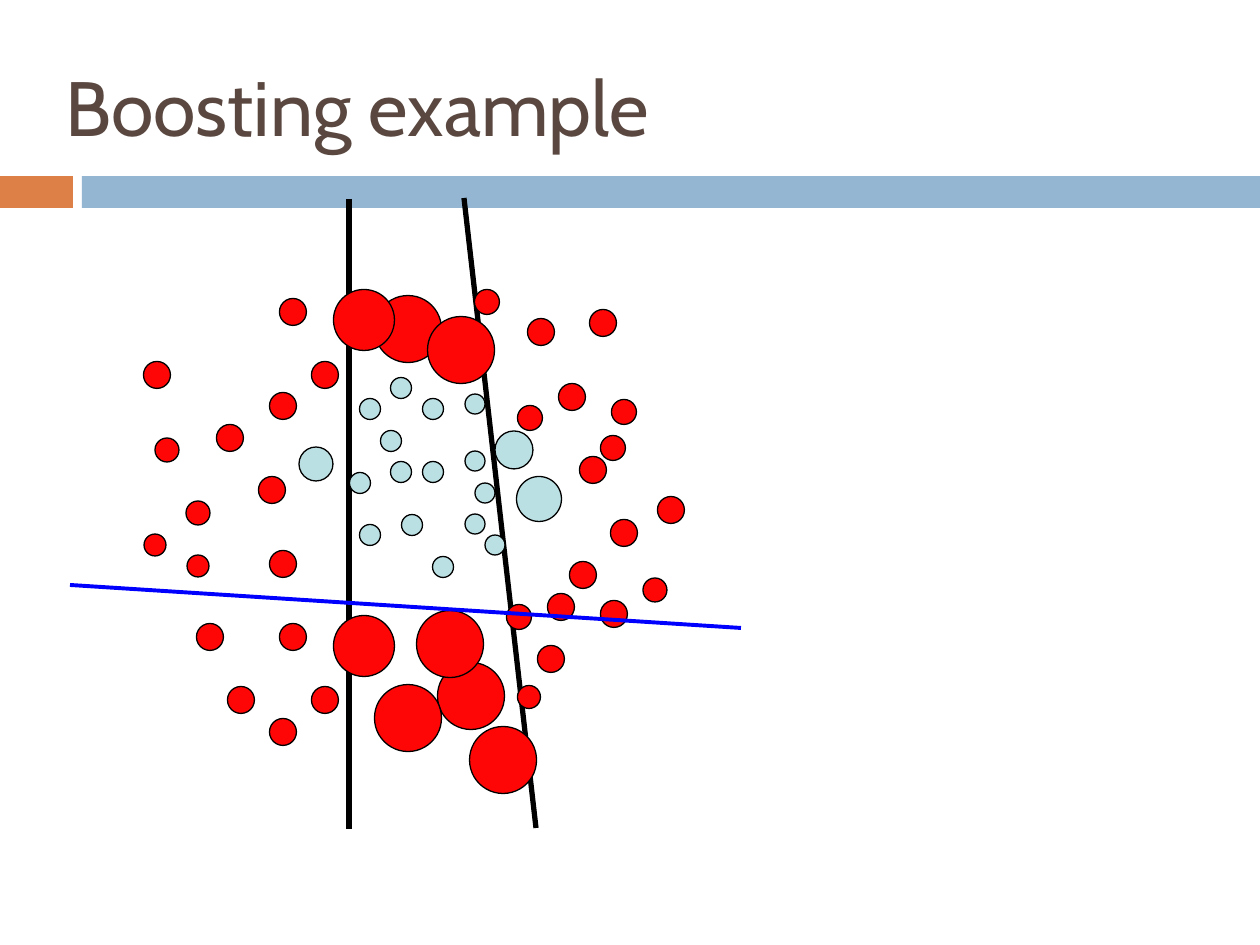
"""Build the boosting example slide: weighted points split by three weak classifiers."""
import pptx
import pptx.dml.color
import pptx.enum.shapes
import pptx.enum.text
import pptx.oxml.ns
import pptx.util
import lxml.etree

RGBColor = pptx.dml.color.RGBColor
BROWN = RGBColor(0x59, 0x47, 0x40)
ORANGE = RGBColor(0xDD, 0x80, 0x47)
STEEL = RGBColor(0x94, 0xB6, 0xD2)
BLACK = RGBColor(0, 0, 0)
BLUE = RGBColor(0, 0, 0xFF)
RED = RGBColor(0xFE, 0x06, 0x06)
PALE = RGBColor(0xBB, 0xE0, 0xE3)
SHAPES = pptx.enum.shapes.MSO_SHAPE
EMU_PER_PX = 914400 / 126

deck = pptx.Presentation()
deck.slide_width = round(1260 * EMU_PER_PX)
deck.slide_height = round(945 * EMU_PER_PX)
slide = deck.slides.add_slide(deck.slide_layouts[6])


def add_filled(kind, box, fill, outline=None):
    shape = slide.shapes.add_shape(kind, *[round(px * EMU_PER_PX) for px in box])
    shape.shadow.inherit = False
    shape.fill.solid()
    shape.fill.fore_color.rgb = fill
    if outline is None:
        shape.line.fill.background()
    else:
        shape.line.color.rgb = outline
        shape.line.width = pptx.util.Pt(0.75)


def add_boundary(ends, color, weight):
    boundary = slide.shapes.add_connector(
        pptx.enum.shapes.MSO_CONNECTOR.STRAIGHT, *[round(px * EMU_PER_PX) for px in ends])
    boundary.line.color.rgb = color
    boundary.line.width = pptx.util.Pt(weight)
    lxml.etree.SubElement(boundary._element.spPr, pptx.oxml.ns.qn("a:effectLst"))


add_filled(SHAPES.RECTANGLE, (0, 176, 73, 32), ORANGE)
add_filled(SHAPES.RECTANGLE, (82, 176, 1178, 32), STEEL)

heading = slide.shapes.add_textbox(*[round(px * EMU_PER_PX) for px in (53, 32, 1134, 157)])
heading.text_frame.word_wrap = True
heading.text_frame.vertical_anchor = pptx.enum.text.MSO_ANCHOR.MIDDLE
heading_line = heading.text_frame.paragraphs[0]
heading_line.line_spacing = 0.93
heading_words = heading_line.add_run()
heading_words.text = "Boosting example"
heading_words.font.name = "Cabin"
heading_words.font.size = pptx.util.Pt(44)
heading_words.font.color.rgb = BROWN

add_boundary((349, 199, 349, 829), BLACK, 3)
add_boundary((464, 198, 536, 828), BLACK, 3)

points_by_weight = [
    (PALE, 21, [(433, 409), (401, 472), (370, 535), (433, 472), (412, 525),
                (360, 483), (370, 409), (443, 567), (391, 441), (401, 388)]),
    (PALE, 20, [(475, 404), (475, 524), (475, 461), (485, 493), (495, 545)]),
    (PALE, 34, [(316, 464)]),
    (RED, 22, [(155, 545), (198, 566)]),
    (RED, 23, [(529, 697)]),
    (RED, 24, [(655, 590), (167, 450), (198, 513)]),
    (RED, 25, [(613, 448), (530, 418), (487, 302), (624, 412), (519, 617)]),
    (RED, 27, [(624, 533), (583, 575), (614, 614), (671, 510), (157, 375), (230, 438),
               (293, 637), (283, 564), (283, 732), (325, 700), (293, 312), (283, 406),
               (325, 375), (541, 332), (603, 323), (572, 397), (210, 637), (272, 490),
               (241, 700), (593, 470), (551, 659), (561, 607)]),
    (RED, 67, [(471, 696), (450, 644), (408, 718), (503, 760), (408, 329), (461, 350)]),
    (RED, 61, [(364, 646), (364, 320)]),
    (PALE, 38, [(514, 450)]),
    (PALE, 45, [(539, 499)]),
]
for color, size, centres in points_by_weight:
    for x, y in centres:
        add_filled(SHAPES.OVAL, (x - size / 2, y - size / 2, size, size), color, BLACK)

add_boundary((70, 585, 741, 628), BLUE, 2.25)

deck.save("out.pptx")
